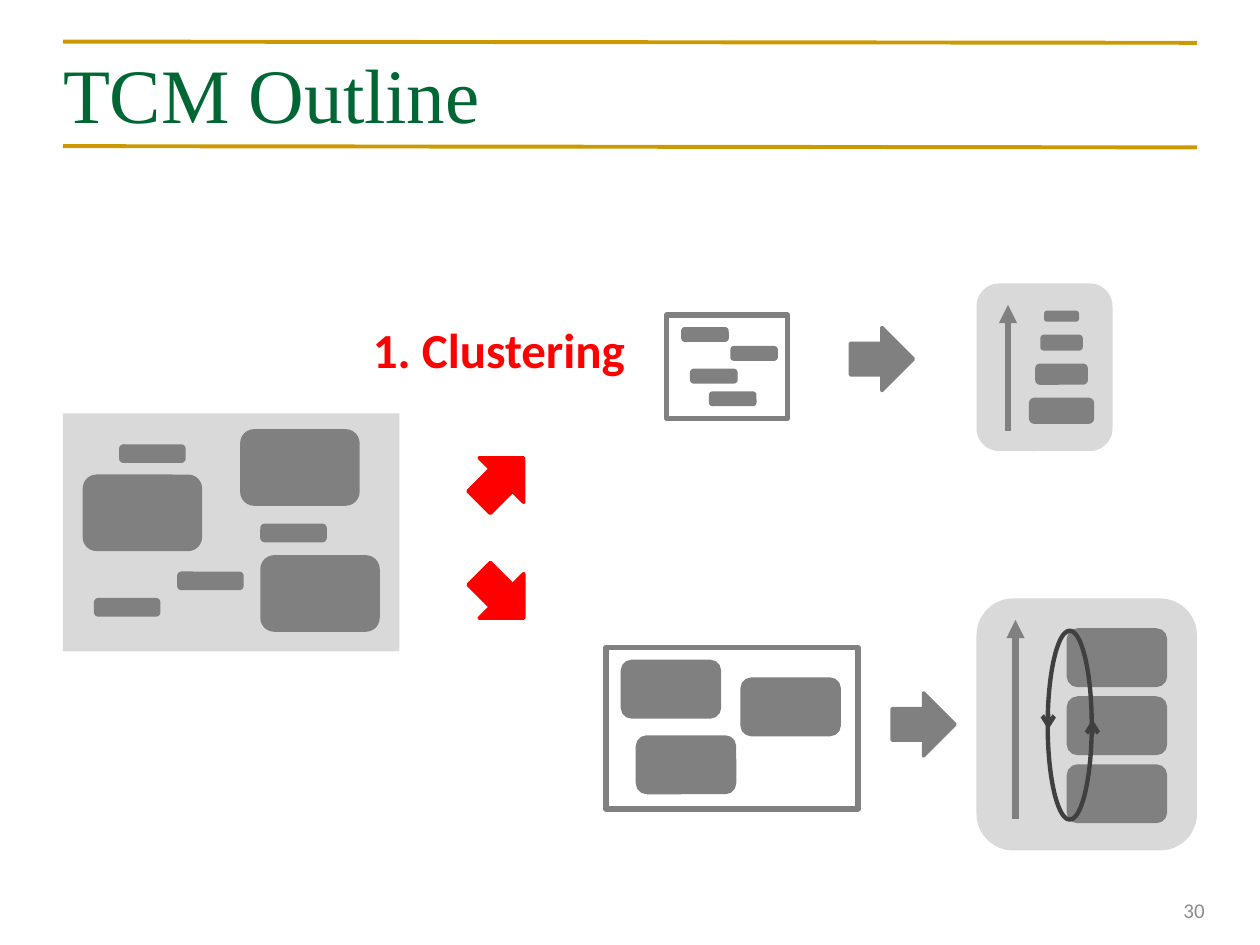
"""Build the TCM Outline slide: mixed tasks split into two clusters, each then ranked."""
from dataclasses import dataclass

from lxml import etree
from pptx import Presentation
from pptx.dml.color import RGBColor
from pptx.enum import shapes, text
from pptx.oxml import ns
from pptx.util import Inches, Pt


@dataclass(frozen=True)
class Theme:
    """Colours, fonts and type sizes of the slide."""
    green: str = "006633"
    gold: str = "CC9900"
    panel: str = "D9D9D9"
    gray: str = "808080"
    dark: str = "404040"
    red: str = "FF0000"
    number: str = "8C8C8C"
    serif: str = "Times New Roman"
    sans: str = "Calibri"
    title_size: int = 44
    label_size: int = 28
    number_size: int = 12


@dataclass(frozen=True)
class Box:
    """A preset shape with its place and paint."""
    left: float
    top: float
    width: float
    height: float
    kind: shapes.MSO_SHAPE = shapes.MSO_SHAPE.ROUNDED_RECTANGLE
    fill: str | None = None
    line: str | None = None
    line_width: float = 2
    rotation: float = 0


@dataclass(frozen=True)
class Line:
    """A straight line, with an optional arrowhead at its end."""
    start: tuple[float, float]
    end: tuple[float, float]
    color: str
    width: float
    head: str | None = None


THEME = Theme()
SMALL, LARGE = (0.5, 0.12), (0.92, 0.58)
THIN, THICK = (0.35, 0.09), (0.77, 0.44)


def panel(left: float, top: float, width: float, height: float,
          kind: shapes.MSO_SHAPE = shapes.MSO_SHAPE.ROUNDED_RECTANGLE) -> Box:
    """Describe a light background panel."""
    return Box(left, top, width, height, kind, THEME.panel)


def task(left: float, top: float, size: tuple[float, float]) -> Box:
    """Describe one gray task bar."""
    return Box(left, top, *size, fill=THEME.gray, line=THEME.gray)


def block_arrow(left: float, top: float, color: str, rotation: float = 0) -> Box:
    """Describe a half-inch block arrow."""
    return Box(left, top, 0.5, 0.5, shapes.MSO_SHAPE.RIGHT_ARROW, color, color,
               rotation=rotation)


def frame(left: float, top: float, width: float, height: float) -> Box:
    """Describe the hollow frame around a cluster."""
    return Box(left, top, width, height, shapes.MSO_SHAPE.RECTANGLE,
               line=THEME.gray, line_width=3)


def draw_box(target, box: Box) -> None:
    """Draw a preset shape on a slide or in a group."""
    shape = target.shapes.add_shape(box.kind, Inches(box.left), Inches(box.top),
                                    Inches(box.width), Inches(box.height))
    shape.shadow.inherit = False
    shape.rotation = box.rotation
    if box.fill:
        shape.fill.solid()
        shape.fill.fore_color.rgb = RGBColor.from_string(box.fill)
    else:
        shape.fill.background()
    if box.line:
        shape.line.color.rgb = RGBColor.from_string(box.line)
        shape.line.width = Pt(box.line_width)
    else:
        shape.line.fill.background()


def draw_line(slide, line: Line) -> None:
    """Draw a straight connector."""
    connector = slide.shapes.add_connector(
        shapes.MSO_CONNECTOR.STRAIGHT, *map(Inches, line.start + line.end))
    connector.line.color.rgb = RGBColor.from_string(line.color)
    connector.line.width = Pt(line.width)
    if line.head:
        outline = connector.line._get_or_add_ln()
        etree.SubElement(outline, ns.qn("a:tailEnd"), type=line.head)
    etree.SubElement(connector._element.spPr, ns.qn("a:effectLst"))


def draw_cluster(slide, boxes: list[Box]) -> None:
    """Draw a frame and its tasks as one group."""
    group = slide.shapes.add_group_shape()
    for box in boxes:
        draw_box(group, box)


def write(shape, words: str, font: str, size: int, color: str,
          alignment: text.PP_ALIGN, bold: bool = False):
    """Write one formatted run and return its paragraph."""
    paragraph = shape.text_frame.paragraphs[0]
    paragraph.alignment = alignment
    run = paragraph.add_run()
    run.text = words
    run.font.name, run.font.size, run.font.bold = font, Pt(size), bold
    run.font.color.rgb = RGBColor.from_string(color)
    return paragraph


def add_texts(slide) -> None:
    """Add the title, the step label and the page number."""
    title = slide.shapes.title
    title.left, title.top = Inches(0.5), Inches(0.3)
    title.width, title.height = Inches(9), Inches(0.87)
    title.text_frame.margin_left = title.text_frame.margin_right = 0
    title.text_frame.vertical_anchor = text.MSO_ANCHOR.MIDDLE
    write(title, "TCM Outline", THEME.serif, THEME.title_size, THEME.green,
          text.PP_ALIGN.LEFT)

    label = slide.shapes.add_textbox(Inches(2.84), Inches(2.58), Inches(2.24), Inches(0.5))
    label.text_frame.word_wrap = False
    label.text_frame.auto_size = text.MSO_AUTO_SIZE.SHAPE_TO_FIT_TEXT
    paragraph = write(label, "1. Clustering", THEME.sans, THEME.label_size, THEME.red,
                      text.PP_ALIGN.CENTER, bold=True)
    paragraph.line_spacing = 0.8

    number = slide.shapes.add_textbox(Inches(7.33), Inches(7.02), Inches(2.33), Inches(0.4))
    number.text_frame.word_wrap = True
    number.text_frame.vertical_anchor = text.MSO_ANCHOR.MIDDLE
    write(number, "30", THEME.sans, THEME.number_size, THEME.number, text.PP_ALIGN.RIGHT)


def main() -> None:
    """Build and save the slide."""
    presentation = Presentation()
    presentation.slide_width, presentation.slide_height = Inches(10), Inches(7.5)
    slide = presentation.slides.add_slide(presentation.slide_layouts[5])
    add_texts(slide)

    mixed = [task(left, top, size) for left, top, size in (
        (1.42, 4.55, SMALL), (2.08, 4.42, LARGE), (0.96, 3.54, SMALL), (0.67, 3.78, LARGE),
        (1.92, 3.42, LARGE), (2.08, 4.17, SMALL), (0.76, 4.76, SMALL))]
    ranked = [task(8.425 - width / 2, top, (width, height)) for top, width, height in (
        (2.48, 0.25, 0.06), (2.67, 0.31, 0.1), (2.9, 0.39, 0.14), (3.17, 0.49, 0.18))]
    shuffled = [task(8.48, 5 + 0.54 * row, THICK) for row in range(3)]
    cycle = Box(7.74, 5.58, 1.5, 0.35, shapes.MSO_SHAPE.OVAL, line=THEME.dark,
                line_width=2.5, rotation=270)

    for box in (panel(7.75, 4.75, 1.75, 2),
                panel(0.5, 3.28, 2.67, 1.89, shapes.MSO_SHAPE.RECTANGLE), *mixed,
                block_arrow(3.73, 3.56, THEME.red, 315), block_arrow(3.73, 4.48, THEME.red, 45),
                panel(7.75, 2.25, 1.08, 1.33), *ranked, *shuffled, cycle,
                block_arrow(6.75, 2.6, THEME.gray), block_arrow(7.08, 5.5, THEME.gray)):
        draw_box(slide, box)

    draw_cluster(slide, [frame(4.81, 5.14, 2, 1.28)] + [
        task(left, top, THICK) for left, top in ((4.94, 5.25), (5.89, 5.39), (5.06, 5.85))])
    draw_cluster(slide, [frame(5.29, 2.5, 0.96, 0.82)] + [
        task(left, top, THIN)
        for left, top in ((5.42, 2.61), (5.49, 2.94), (5.81, 2.76), (5.64, 3.12))])

    for line in (Line((0.5, 0.33), (9.5, 0.34), THEME.gold, 2.25),
                 Line((0.5, 1.16), (9.5, 1.17), THEME.gold, 2.25),
                 Line((8, 3.42), (8, 2.42), THEME.gray, 3.5, "triangle"),
                 Line((8.06, 6.5), (8.06, 4.92), THEME.gray, 3.5, "triangle"),
                 Line((8.32, 5.71), (8.32, 5.79), THEME.dark, 2.5, "arrow"),
                 Line((8.67, 5.79), (8.67, 5.71), THEME.dark, 2.5, "arrow")):
        draw_line(slide, line)

    presentation.save("out.pptx")


if __name__ == "__main__":
    main()
